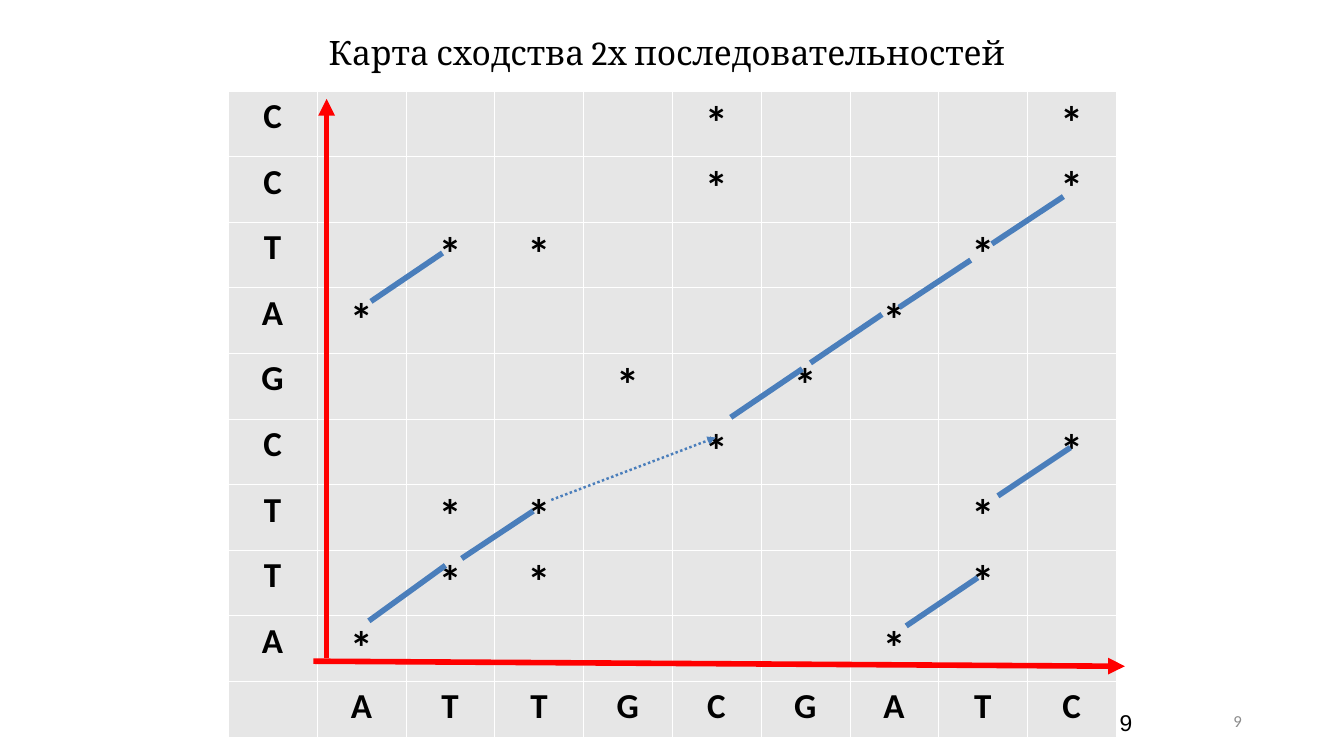
from dataclasses import dataclass

import pptx
import pptx.dml.color
import pptx.enum.dml
import pptx.enum.shapes
import pptx.enum.text
import pptx.oxml
import pptx.oxml.ns
import pptx.util
from lxml import etree

Pt = pptx.util.Pt
ALIGN = pptx.enum.text.PP_ALIGN
ANCHOR = pptx.enum.text.MSO_ANCHOR
qn = pptx.oxml.ns.qn


@dataclass(frozen=True)
class Theme:
    ink: str = "000000"
    muted: str = "8C8C8C"
    cell: str = "E6E6E6"
    grid: str = "FFFFFF"
    axis: str = "FF0000"
    match: str = "4A7EBB"
    title_font: str = "Cambria"
    body_font: str = "Calibri"
    number_font: str = "Arial"
    title_size: float = 24
    letter_size: float = 25
    star_size: float = 33
    number_size: float = 16.3
    footer_size: float = 12
    thick: float = 4
    thin: float = 1.75
    hairline: float = 0.06


def rgb(value):
    return pptx.dml.color.RGBColor.from_string(value)


def write(tf, text, *, font, size, color, bold=False, align=ALIGN.LEFT):
    p = tf.paragraphs[0]
    p.alignment = align
    r = p.add_run()
    r.text = text
    r.font.name = font
    r.font.size = Pt(size)
    r.font.bold = bold
    r.font.color.rgb = rgb(color)


class SlideBuilder:
    def __init__(self, slide, theme):
        self.slide = slide
        self.theme = theme

    def text(self, box, text, anchor=ANCHOR.TOP, **style):
        tf = self.slide.shapes.add_textbox(*map(Pt, box)).text_frame
        tf.word_wrap = True
        tf.vertical_anchor = anchor
        write(tf, text, **style)

    def line(self, start, end, color, width, arrow=False, dash=None):
        sp = self.slide.shapes.add_connector(
            pptx.enum.shapes.MSO_CONNECTOR.STRAIGHT, *map(Pt, start + end))
        sp.line.color.rgb = rgb(color)
        sp.line.width = Pt(width)
        if dash:
            sp.line.dash_style = dash
        if arrow:
            etree.SubElement(sp.line._get_or_add_ln(), qn("a:tailEnd"), type="triangle")
        etree.SubElement(sp._element.spPr, qn("a:effectLst"))

    def cell(self, cell, text, size):
        th = self.theme
        cell.margin_left = cell.margin_right = Pt(6.6)
        cell.margin_top = cell.margin_bottom = Pt(3.3)
        tc_pr = cell._tc.get_or_add_tcPr()
        for side in ("a:lnL", "a:lnR", "a:lnT", "a:lnB"):
            ln = etree.SubElement(tc_pr, qn(side), w=str(Pt(th.hairline)))
            fill = etree.SubElement(ln, qn("a:solidFill"))
            etree.SubElement(fill, qn("a:srgbClr"), val=th.grid)
        cell.fill.solid()
        cell.fill.fore_color.rgb = rgb(th.cell)
        if text:
            write(cell.text_frame, text, font=th.body_font, size=size,
                  color=th.ink, bold=True, align=ALIGN.CENTER)

    def dot_plot(self, left, top, across, down, col_width, row_height, last_height):
        """Grid with a star wherever the row letter equals the column letter."""
        th = self.theme
        rows, cols = len(down) + 1, len(across) + 1
        table = self.slide.shapes.add_table(
            rows, cols, Pt(left), Pt(top), Pt(cols * col_width),
            Pt(len(down) * row_height + last_height)).table
        table.first_row = table.horz_banding = False
        for col in table.columns:
            col.width = Pt(col_width)
        for i, row in enumerate(table.rows):
            row.height = Pt(row_height if i < len(down) else last_height)
        for i, row_letter in enumerate(down + " "):
            for j, col_letter in enumerate(" " + across):
                if j == 0 or i == len(down):
                    text, size = (row_letter + col_letter).strip(), th.letter_size
                else:
                    text = "*" if row_letter == col_letter else ""
                    size = th.star_size
                self.cell(table.cell(i, j), text, size)


# Start and end points of the runs of matching letters
MATCHES = [
    ((263.5, 443.5), (318.2, 403.9)),
    ((329.8, 398.9), (380.9, 365)),
    ((522, 298.1), (573.1, 263.5)),
    ((578.9, 259.2), (630, 224.6)),
    ((642.2, 219.6), (693.4, 185.8)),
    ((708.5, 174.2), (759.6, 140.4)),
    ((265, 215.3), (316.1, 180.7)),
    ((647.3, 447.1), (698.4, 412.6)),
    ((712.8, 354.2), (764.6, 319.7)),
]


def main():
    prs = pptx.Presentation()
    prs.slide_width, prs.slide_height = Pt(960), Pt(540)
    th = Theme()
    s = SlideBuilder(prs.slides.add_slide(prs.slide_layouts[6]), th)

    s.text((152.6, 10.1, 647.3, 54.7), "Карта сходства 2х последовательностей",
           anchor=ANCHOR.MIDDLE, font=th.title_font, size=th.title_size,
           color=th.ink, align=ALIGN.CENTER)
    s.dot_plot(163, 64.8, across="ATTGCGATC", down="CCTAGCTTA",
               col_width=63.43, row_height=46.87, last_height=40)
    for start, end in MATCHES:
        s.line(start, end, th.match, th.thick)
    s.line((223.9, 472.3), (803.5, 475.9), th.axis, th.thick, arrow=True)
    s.line((233.3, 470.2), (233.3, 70.6), th.axis, th.thick, arrow=True)
    s.line((393.8, 357.1), (511.2, 312.5), th.match, th.thin, arrow=True,
           dash=pptx.enum.dml.MSO_LINE.ROUND_DOT)
    s.text((792.7, 502.6, 38.9, 31), "9", font=th.number_font,
           size=th.number_size, color=th.ink)
    s.text((678.2, 500.4, 216, 28.8), "9", anchor=ANCHOR.MIDDLE, font=th.body_font,
           size=th.footer_size, color=th.muted, align=ALIGN.RIGHT)
    prs.save("out.pptx")


if __name__ == "__main__":
    main()
